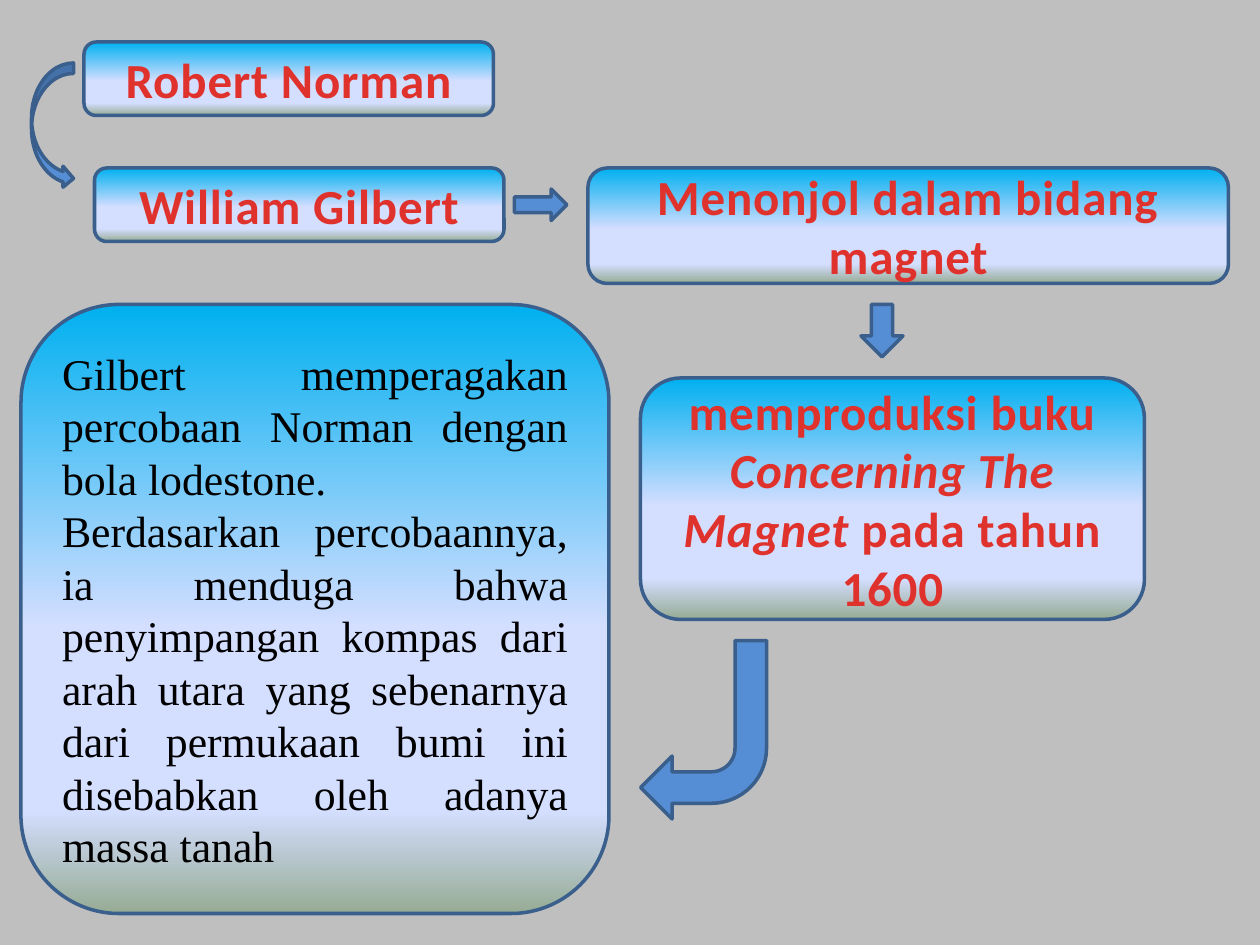
from dataclasses import dataclass

from lxml.etree import SubElement
from pptx import Presentation
from pptx.dml.color import RGBColor
from pptx.enum.shapes import MSO_SHAPE
from pptx.enum.text import MSO_ANCHOR, PP_ALIGN
from pptx.oxml.ns import qn
from pptx.util import Pt


@dataclass(frozen=True)
class Theme:
    background: str = "BFBFBF"
    outline: str = "3A5F8C"
    arrow: str = "558ED5"
    heading: str = "E0322D"
    body: str = "000000"
    # Gradient stops: position in percent, colour
    box_stops: tuple = ((0, "00B0F0"), (53, "D4DEFF"), (83, "D4DEFF"), (100, "96AB94"))
    heading_font: str = "Calibri"
    body_font: str = "Times New Roman"
    heading_size: int = 28
    body_size: int = 25
    heading_spacing: int = 50  # hundredths of a point
    line_width: int = 2


class SlideBuilder:
    def __init__(self, prs, theme):
        self.theme = theme
        self.s = prs.slides.add_slide(prs.slide_layouts[6])
        fill = self.s.background.fill
        fill.solid()
        fill.fore_color.rgb = RGBColor.from_string(theme.background)

    def shape(self, kind, left, top, width, height):
        sp = self.s.shapes.add_shape(kind, Pt(left), Pt(top), Pt(width), Pt(height))
        sp.shadow.inherit = False
        sp.line.color.rgb = RGBColor.from_string(self.theme.outline)
        sp.line.width = Pt(self.theme.line_width)
        return sp

    def arrow(self, kind, *box, rotation=0):
        sp = self.shape(kind, *box)
        sp.fill.solid()
        sp.fill.fore_color.rgb = RGBColor.from_string(self.theme.arrow)
        sp.rotation = rotation

    def box(self, *box):
        """Rounded box with a vertical gradient; returns its text frame."""
        sp = self.shape(MSO_SHAPE.ROUNDED_RECTANGLE, *box)
        sp.fill.gradient()
        sp.fill.gradient_angle = 270  # first stop on top
        stops = sp.element.spPr.find(qn("a:gradFill")).find(qn("a:gsLst"))
        for old in list(stops):
            stops.remove(old)
        for position, color in self.theme.box_stops:
            gs = SubElement(stops, qn("a:gs"), pos=str(position * 1000))
            SubElement(gs, qn("a:srgbClr"), val=color)
        tf = sp.text_frame
        tf.word_wrap = True
        tf.vertical_anchor = MSO_ANCHOR.MIDDLE
        return tf

    def run(self, p, text, font, size, color):
        r = p.add_run()
        r.text = text
        r.font.name = font
        r.font.size = Pt(size)
        r.font.color.rgb = RGBColor.from_string(color)
        return r

    def heading_box(self, box, *runs):
        """Centred bold text; each run is (text, italic)."""
        t = self.theme
        p = self.box(*box).paragraphs[0]
        p.alignment = PP_ALIGN.CENTER
        for text, italic in runs:
            r = self.run(p, text, t.heading_font, t.heading_size, t.heading)
            r.font.bold = True
            r.font.italic = italic
            r.font._element.set("spc", str(t.heading_spacing))

    def body_box(self, box, *paragraphs):
        t = self.theme
        tf = self.box(*box)
        for i, text in enumerate(paragraphs):
            p = tf.add_paragraph() if i else tf.paragraphs[0]
            p.alignment = PP_ALIGN.JUSTIFY
            self.run(p, text, t.body_font, t.body_size, t.body)


def main():
    prs = Presentation()
    prs.slide_width, prs.slide_height = Pt(720), Pt(540)
    slide = SlideBuilder(prs, Theme())

    # Scientists
    slide.heading_box((48, 24, 234, 42), ("Robert Norman", False))
    slide.arrow(MSO_SHAPE.CURVED_RIGHT_ARROW, 18, 36, 24, 72)
    slide.heading_box((54, 96, 234, 42), ("William Gilbert", False))

    # Field of work and book
    slide.arrow(MSO_SHAPE.RIGHT_ARROW, 294, 108, 30, 18)
    slide.heading_box((336, 96, 366, 66), ("Menonjol dalam bidang magnet", False))
    slide.heading_box(
        (366, 216, 288, 138),
        ("memproduksi buku ", False),
        ("Concerning The Magnet ", True),
        ("pada tahun 1600", False),
    )
    slide.arrow(MSO_SHAPE.DOWN_ARROW, 492, 174, 24, 30)

    # Experiment
    slide.body_box(
        (12, 174, 336, 348),
        "Gilbert memperagakan percobaan Norman dengan bola lodestone.",
        "Berdasarkan percobaannya, ia menduga bahwa penyimpangan kompas dari arah "
        "utara yang sebenarnya dari permukaan bumi ini disebabkan oleh adanya massa tanah",
    )
    slide.arrow(MSO_SHAPE.BENT_ARROW, 366, 366, 72, 102, rotation=180)

    prs.save("out.pptx")


if __name__ == "__main__":
    main()
